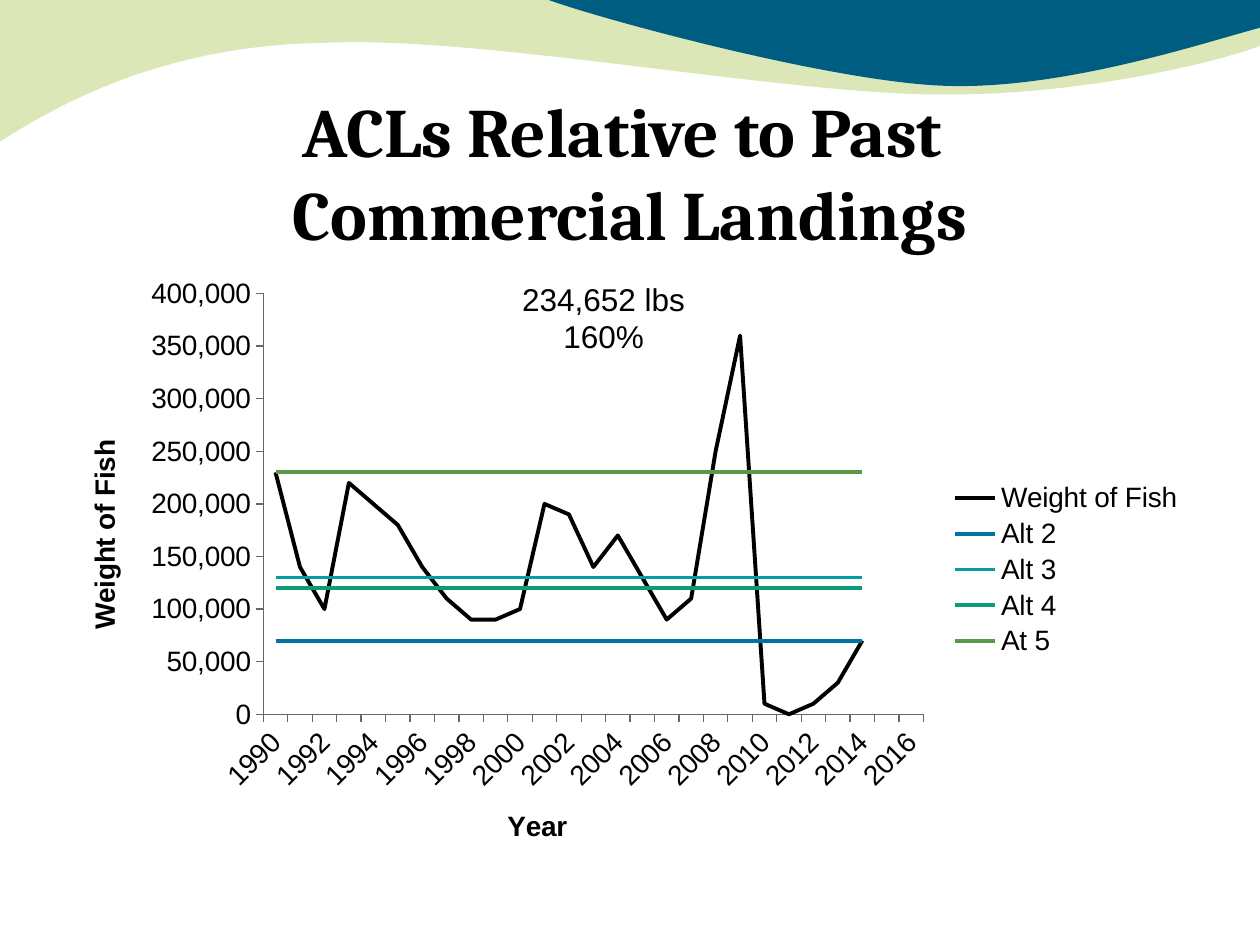
from dataclasses import dataclass

from lxml import etree
from pptx import Presentation
from pptx.chart.data import CategoryChartData
from pptx.dml.color import RGBColor
from pptx.enum.chart import XL_CHART_TYPE as ChartType
from pptx.enum.chart import XL_LEGEND_POSITION as LegendPosition
from pptx.enum.chart import XL_TICK_MARK as TickMark
from pptx.enum.text import MSO_ANCHOR as Anchor
from pptx.enum.text import PP_ALIGN as Align
from pptx.oxml.ns import qn
from pptx.util import Inches, Pt


@dataclass(frozen=True)
class Theme:
    heading_font: str = "Cambria"
    body_font: str = "Arial"
    title_size: float = 39.6
    note_size: float = 18
    chart_size: float = 16
    line_width: float = 2.25
    text: str = "000000"
    axis: str = "666666"
    pale_green: str = "DBE7B6"
    deep_blue: str = "005D82"
    series: tuple = ("000000", "0075A2", "089CA3", "0C9B74", "5D9749")


THEME = Theme()

# Wave outlines: two numbers are a straight line, six are a Bezier curve
GREEN_WAVE = [
    (0, 0), (4.4, -0.01),
    (4.76, 0.17, 6.64, 0.63, 7.58, 0.63), (8.53, 0.63, 9.58, 0.26, 10, 0.09),
    (10.01, 0.36),
    (9.83, 0.44, 8.7, 0.76, 7.46, 0.75), (6.22, 0.75, 3.82, 0.28, 2.57, 0.34),
    (1.29, 0.36, 0.46, 0.83, -0.01, 1.13),
]
BLUE_WAVE = [
    (4.33, -0.01),
    (4.66, 0.12, 6.54, 0.64, 7.48, 0.68), (8.43, 0.72, 9.58, 0.33, 10, 0.22),
    (10, 0),
]

# Landings and catch limits, in thousands of pounds
YEARS = [float(year) for year in range(1990, 2017)]
LANDINGS = [
    230, 140, 100, 220, 200, 180, 140, 110, 90, 90, 100, 200, 190,
    140, 170, 130, 90, 110, 250, 360, 10, 0, 10, 30, 70,
]
LIMITS = {"Alt 2": 70, "Alt 3": 130, "Alt 4": 120, "At 5": 230}

# Chart frame and the plot area inside it, in inches
CHART_WIDTH, CHART_HEIGHT = 9, 4.8
PLOT_LEFT, PLOT_TOP, PLOT_WIDTH, PLOT_HEIGHT = 1.59, 0.21, 5.24, 3.34


def colour(code):
    return RGBColor.from_string(code)


def style_font(font, size, name=THEME.body_font, bold=False):
    font.size, font.name, font.bold = Pt(size), name, bold
    font.color.rgb = colour(THEME.text)


def add_wave(page, outline, fill):
    corners = [(Inches(part[-2]), Inches(part[-1])) for part in outline]
    builder = page.shapes.build_freeform(*corners[0])
    builder.add_line_segments(corners[1:], close=True)
    wave = builder.convert_to_shape()
    wave.shadow.inherit = False
    wave.fill.solid()
    wave.fill.fore_color.rgb = colour(fill)
    wave.line.fill.background()

    # Bend the straight segments that have control points
    segments = list(wave._element.iter(qn("a:lnTo")))
    for segment, part in zip(segments, outline[1:]):
        if len(part) == 6:
            segment.tag = qn("a:cubicBezTo")
            for i, (x, y) in enumerate((part[:2], part[2:4])):
                point = etree.Element(qn("a:pt"))
                point.set("x", str(Inches(x) - wave.left))
                point.set("y", str(Inches(y) - wave.top))
                segment.insert(i, point)


def add_text(page, text, left, top, width, height, size, font=THEME.body_font,
             bold=False, anchor=Anchor.TOP, side_margin=0.1, bottom_margin=0.05):
    box = page.shapes.add_textbox(Inches(left), Inches(top), Inches(width), Inches(height))
    frame = box.text_frame
    frame.word_wrap = True
    frame.vertical_anchor = anchor
    frame.margin_left = frame.margin_right = Inches(side_margin)
    frame.margin_bottom = Inches(bottom_margin)
    frame.text = text
    for para in frame.paragraphs:
        para.alignment = Align.CENTER
        for span in para.runs:
            style_font(span.font, size, font, bold)


def style_axis(axis, title):
    axis.has_major_gridlines = False
    axis.major_tick_mark = TickMark.OUTSIDE
    axis.minor_tick_mark = TickMark.NONE
    axis.format.line.color.rgb = colour(THEME.axis)
    style_font(axis.tick_labels.font, THEME.chart_size)
    axis.has_title = True
    frame = axis.axis_title.text_frame
    frame.text = title
    style_font(frame.paragraphs[0].runs[0].font, THEME.chart_size, bold=True)


def place_plot(chart):
    area = chart._chartSpace.chart.plotArea
    for old in area.findall(qn("c:layout")):
        area.remove(old)
    layout = etree.Element(qn("c:layout"))
    manual = etree.SubElement(layout, qn("c:manualLayout"))
    settings = {"layoutTarget": "inner", "xMode": "edge", "yMode": "edge",
                "x": PLOT_LEFT / CHART_WIDTH, "y": PLOT_TOP / CHART_HEIGHT,
                "w": PLOT_WIDTH / CHART_WIDTH, "h": PLOT_HEIGHT / CHART_HEIGHT}
    for tag, value in settings.items():
        etree.SubElement(manual, qn(f"c:{tag}")).set("val", str(value))
    area.insert(0, layout)


def add_landings_chart(page):
    data = CategoryChartData(number_format="#,##0")
    data.categories = YEARS
    data.add_series("Weight of Fish", [value * 1000 for value in LANDINGS])
    for name, limit in LIMITS.items():
        data.add_series(name, [limit * 1000] * len(LANDINGS))
    chart = page.shapes.add_chart(
        ChartType.LINE, Inches(0.5), Inches(2.12),
        Inches(CHART_WIDTH), Inches(CHART_HEIGHT), data).chart
    chart.has_title = False
    style_font(chart.font, THEME.chart_size)

    # Lines
    for series, shade in zip(chart.plots[0].series, THEME.series):
        series.smooth = False
        series.format.line.color.rgb = colour(shade)
        series.format.line.width = Pt(THEME.line_width)

    # Axes
    style_axis(chart.category_axis, "Year")
    style_axis(chart.value_axis, "Weight of Fish")
    value_axis = chart.value_axis
    value_axis.minimum_scale, value_axis.maximum_scale = 0, 400000
    value_axis.major_unit = 50000
    value_axis.tick_labels.number_format = "#,##0"
    value_axis.tick_labels.number_format_is_linked = False
    years = chart.category_axis._element
    years.find(qn("c:txPr")).find(qn("a:bodyPr")).set("rot", "-2700000")
    skip = etree.Element(qn("c:tickLblSkip"))
    skip.set("val", "2")
    years.find(qn("c:noMultiLvlLbl")).addprevious(skip)

    # Legend and plot area
    chart.has_legend = True
    chart.legend.position = LegendPosition.RIGHT
    chart.legend.include_in_layout = False
    style_font(chart.legend.font, THEME.chart_size)
    place_plot(chart)


def main():
    deck = Presentation()
    deck.slide_width, deck.slide_height = Inches(10), Inches(7.5)
    page = deck.slides.add_slide(deck.slide_layouts[6])

    # Background waves
    add_wave(page, GREEN_WAVE, THEME.pale_green)
    add_wave(page, BLUE_WAVE, THEME.deep_blue)

    # Title, chart and note
    add_text(page, "ACLs Relative to Past \vCommercial Landings", 0.5, 0.77, 9, 1.25,
             THEME.title_size, THEME.heading_font, bold=True, anchor=Anchor.BOTTOM,
             side_margin=0, bottom_margin=0)
    add_landings_chart(page)
    add_text(page, "234,652 lbs\n160%", 4, 2.17, 1.58, 0.71, THEME.note_size)

    deck.save("out.pptx")


if __name__ == "__main__":
    main()
